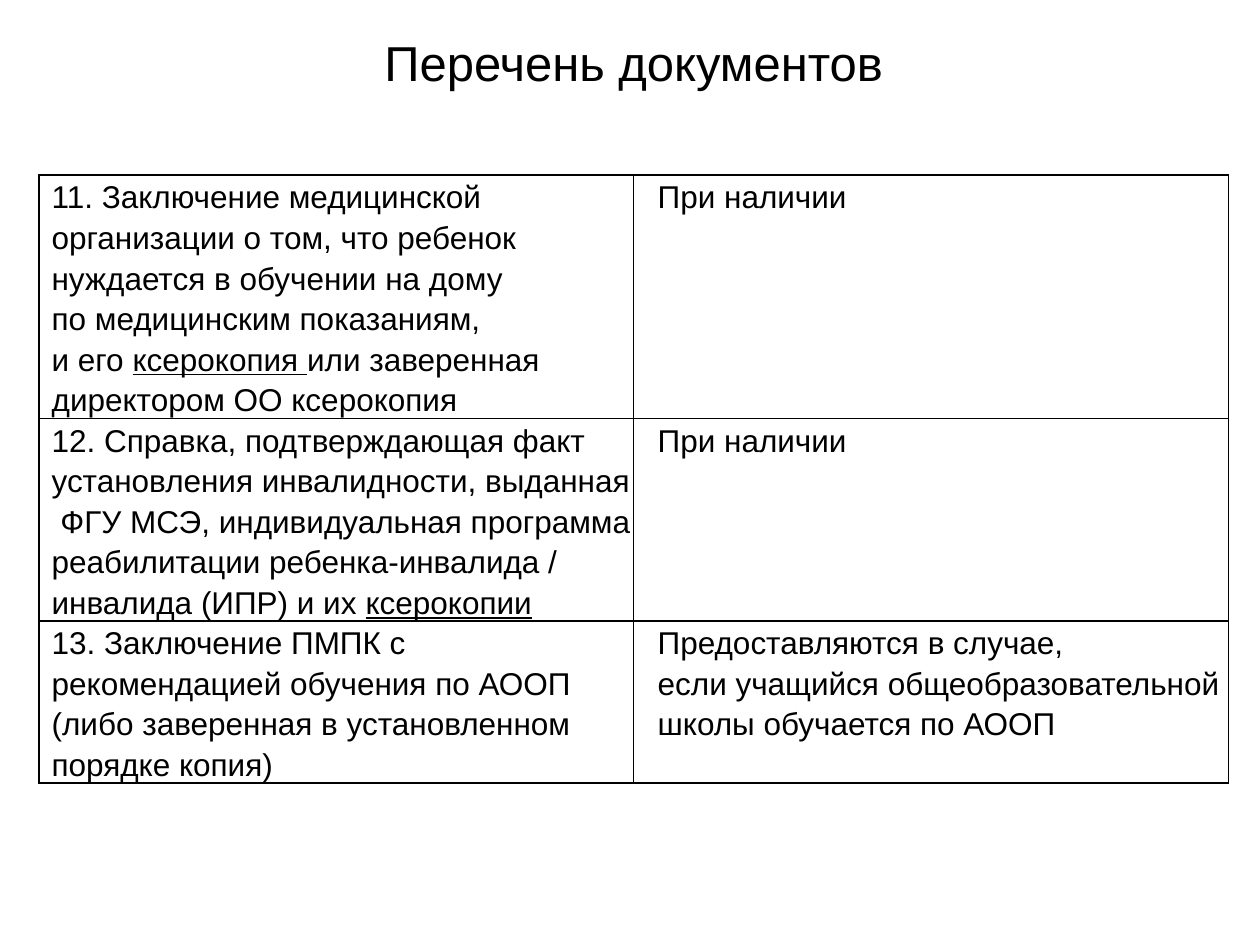
import pptx
import pptx.util
import pptx.dml.color
import pptx.enum.text
import pptx.oxml.ns
from dataclasses import dataclass
from lxml import etree

Inches = pptx.util.Inches
Pt = pptx.util.Pt


@dataclass(frozen=True)
class Theme:
    font: str = "Arial"
    ink: str = "000000"
    paper: str = "FFFFFF"
    title_size: int = 28
    cell_size: int = 18
    border: int = 1


theme = Theme()


def add_span(para, text, *, size, underline=False):
    """Add a formatted run; a tilde in the text stands for a no-break space."""
    span = para.add_run()
    span.text = text.replace("~", chr(160))
    span.font.name = theme.font
    span.font.size = Pt(size)
    span.font.bold = False
    span.font.underline = underline
    span.font.color.rgb = pptx.dml.color.RGBColor.from_string(theme.ink)


def add_border(cell, side):
    """Draw one side of a table cell."""
    qn = pptx.oxml.ns.qn
    line = etree.SubElement(cell._tc.get_or_add_tcPr(), qn(f"a:ln{side}"), w=str(Pt(theme.border)))
    fill = etree.SubElement(line, qn("a:solidFill"))
    etree.SubElement(fill, qn("a:srgbClr"), val=theme.ink)


# Deck and page
deck = pptx.Presentation()
deck.slide_width, deck.slide_height = Inches(10), Inches(7.5)
page = deck.slides.add_slide(deck.slide_layouts[6])
page.background.fill.solid()
page.background.fill.fore_color.rgb = pptx.dml.color.RGBColor.from_string(theme.paper)

# Documents: each cell lists paragraphs, and every second span is underlined
documents = [
    (
        [["11. Заключение медицинской организации о~том, что~ребенок нуждается "
          "в~обучении на~дому по~медицинским показаниям, и~его~",
          "ксерокопия~",
          "или~заверенная директором ОО~ксерокопия"]],
        [["При наличии"]],
    ),
    (
        [["12. Справка, подтверждающая факт установления инвалидности, выданная"],
         [" ФГУ МСЭ,~индивидуальная программа реабилитации ребенка-инвалида / "
          "инвалида (ИПР) и~их~",
          "ксерокопии"]],
        [["При наличии"]],
    ),
    (
        [["13. Заключение ПМПК~с рекомендацией обучения по~АООП "
          "(либо заверенная в~установленном порядке копия)"]],
        [["Предоставляются в~случае, если~учащийся общеобразовательной "
          "школы~обучается по АООП"]],
    ),
]
row_heights = [1.45, 1.56, 1.04]
indents = [0.1, 0.19]

# Table of documents
frame = page.shapes.add_table(len(documents), len(indents), Inches(0.31), Inches(1.39),
                              Inches(9.45), Inches(sum(row_heights)))
table = frame.table
table.first_row = table.horz_banding = False
for column in table.columns:
    column.width = Inches(4.72)

for row, (height, document) in enumerate(zip(row_heights, documents)):
    table.rows[row].height = Inches(height)
    for column, paragraphs in enumerate(document):
        cell = table.cell(row, column)
        cell.margin_left = cell.margin_right = cell.margin_top = cell.margin_bottom = 0
        for side in "LRTB":
            add_border(cell, side)
        cell.fill.background()
        for number, spans in enumerate(paragraphs):
            para = cell.text_frame.add_paragraph() if number else cell.text_frame.paragraphs[0]
            para.line_spacing = 1.15
            spacing = Pt(7.5 if len(paragraphs) == 1 else 0)
            para.space_before = para.space_after = spacing
            para._p.get_or_add_pPr().set("marL", str(Inches(indents[column])))
            para._p.get_or_add_pPr().set("indent", "0")
            for position, text in enumerate(spans):
                add_span(para, text, size=theme.cell_size, underline=position % 2 == 1)

# Title
box = page.shapes.add_textbox(Inches(1.41), Inches(0.21), Inches(7.24), Inches(0.57))
box.text_frame.word_wrap = True
box.text_frame.auto_size = pptx.enum.text.MSO_AUTO_SIZE.SHAPE_TO_FIT_TEXT
para = box.text_frame.paragraphs[0]
para.alignment = pptx.enum.text.PP_ALIGN.CENTER
add_span(para, "Перечень документов", size=theme.title_size)

deck.save("out.pptx")
